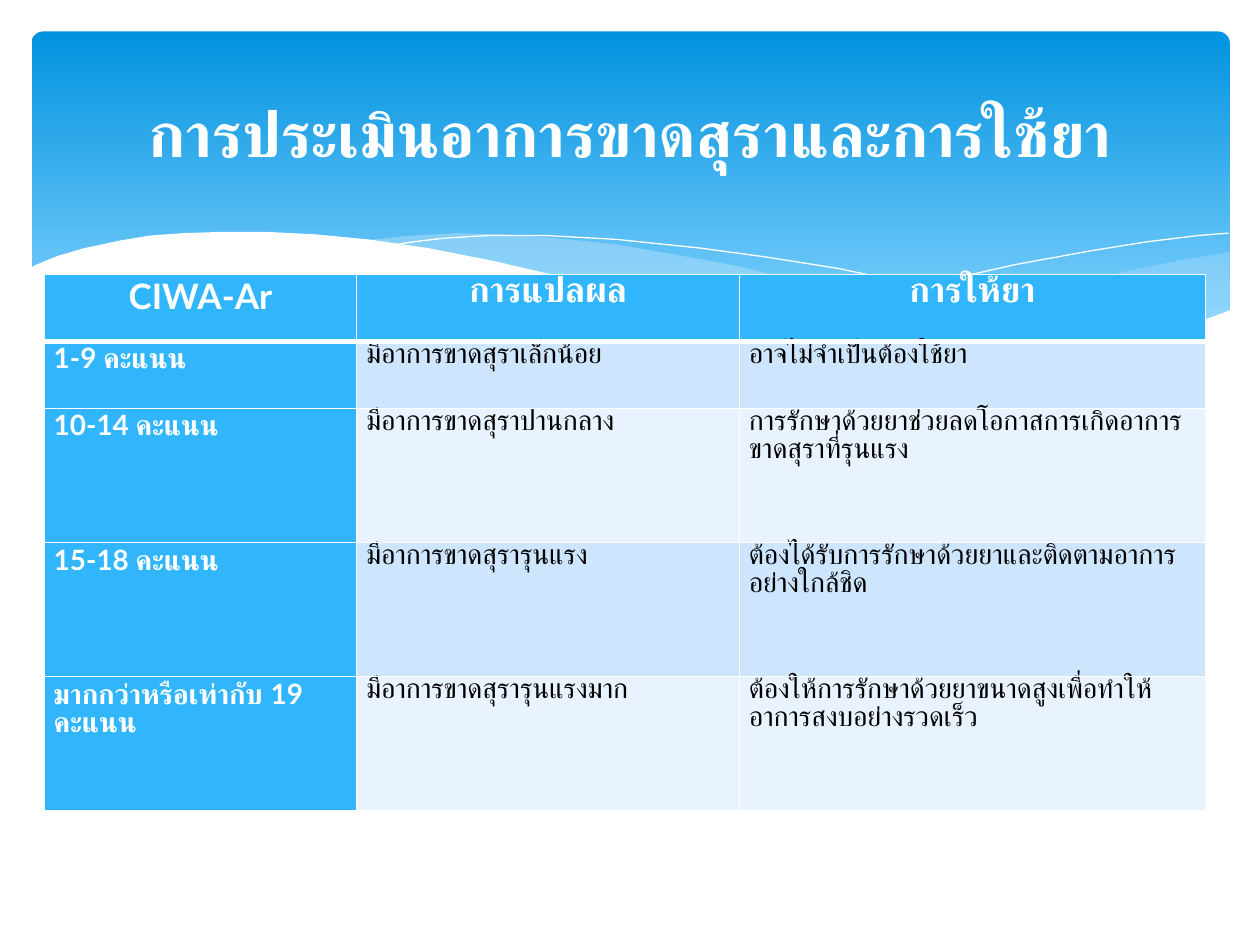
"""Build the slide on assessing alcohol withdrawal and choosing medication."""
import pptx
import pptx.dml.color
import pptx.enum.shapes
import pptx.enum.text
import pptx.oxml
import pptx.oxml.ns
import pptx.util

Pt = pptx.util.Pt
CENTER = pptx.enum.text.PP_ALIGN.CENTER
LEFT = pptx.enum.text.PP_ALIGN.LEFT
COLORS = {
    "white": "FFFFFF", "black": "000000", "sky top": "0293E0", "sky bottom": "83D3FE",
    "mist": "C6E7FC", "accent": "31B6FD", "band dark": "CEE5FE", "band light": "E8F3FF",
}


def color(name):
    return pptx.dml.color.RGBColor.from_string(COLORS[name])


def write(frame, text, alignment, size, bold, color_name):
    paragraph = frame.paragraphs[0]
    paragraph.alignment = alignment
    run = paragraph.add_run()
    run.text = text
    for name, value in {"name": "Lato", "size": Pt(size), "bold": bold}.items():
        setattr(run.font, name, value)
    run.font.color.rgb = color(color_name)


presentation = pptx.Presentation()
presentation.slide_width, presentation.slide_height = Pt(720), Pt(540)
slide = presentation.slides.add_slide(presentation.slide_layouts[6])

sky = slide.shapes.add_shape(
    pptx.enum.shapes.MSO_SHAPE.ROUNDED_RECTANGLE, Pt(18), Pt(18), Pt(684.7), Pt(194.4))
sky.adjustments[0] = 0.034
sky.shadow.inherit = False
sky.line.fill.background()
sky.fill.gradient()
sky.fill.gradient_angle = 270
for stop, position, name in zip(sky.fill.gradient_stops, (0, 0.9), ("sky top", "sky bottom")):
    stop.position = position
    stop.color.rgb = color(name)

right_wave = [
    (702.7, 144), (673.2, 149), (641.5, 155.5), (619.9, 160.6), (579.6, 170.6), (542.2, 178.6),
    (508.3, 185), (475.9, 190.8), (507.6, 195.1), (536.4, 198), (578.2, 200.2), (614.9, 198.7),
    (645.8, 194.4), (673.2, 188.6), (702.7, 177.8)]
middle_wave = [
    (643, 196.6), (602.6, 190.8), (558, 182.9), (508.3, 172.8), (452.9, 159.8), (420.5, 151.9),
    (389.5, 146.2), (352.1, 139.7), (318.2, 136.1), (287.3, 133.9), (259.9, 133.2),
    (236.2, 134.6), (205.9, 137.5), (246.2, 143.3), (290.9, 151.9), (323.3, 159.8),
    (381.6, 172.8), (432.7, 183.6), (478.8, 191.5), (519.8, 197.3), (556.6, 199.4),
    (589, 200.2), (617, 199.4)]
left_thread = [
    (222.5, 140.4), (236.2, 138.2), (254.2, 136.1), (278.6, 134.6), (311.8, 134.6),
    (352.1, 136.8), (400.3, 141.8), (437.8, 146.9), (478.8, 153.4), (523.4, 162.7),
    (572.4, 173.5), (625.7, 187.9), (653, 195.8)]
right_thread = [
    (441.4, 185), (470.2, 177.1), (500.4, 169.2), (538.6, 160.6), (580.3, 151.2),
    (623.5, 143.3), (655.2, 138.2), (684.7, 134.6), (702, 133.2)]
front_wave = [
    (703.4, 177.1), (684, 184.3), (662.4, 190.8), (638.6, 195.1), (612, 198), (582.5, 199.4),
    (547.9, 198), (509.8, 194.4), (466.6, 188.6), (416.9, 180), (362.2, 167.8), (321.8, 158.4),
    (281.5, 149), (244.8, 141.8), (210.2, 136.8), (180, 133.9), (151.9, 132.5), (127.4, 132.5),
    (105.1, 133.2), (85.7, 134.6), (68.4, 137.5), (48.2, 141.8), (33.1, 146.2), (20.9, 151.2),
    (16.6, 153.4), (16.6, 236.9), (703.4, 236.9)]

for points, fill_name, opacity in (
        (right_wave, "mist", 29), (middle_wave, "mist", 40), (left_thread, None, 100),
        (right_thread, None, 100), (front_wave, "white", 100)):
    tenths = [(x * 10, y * 10) for x, y in points]
    builder = slide.shapes.build_freeform(*tenths[0], scale=Pt(0.1))
    builder.add_line_segments(tenths[1:], close=fill_name is not None)
    shape = builder.convert_to_shape()
    shape.shadow.inherit = False
    if fill_name is None:
        shape.fill.background()
        shape.line.color.rgb = color("white")
        shape.line.width = Pt(0)
        continue
    shape.line.fill.background()
    shape.fill.solid()
    shape.fill.fore_color.rgb = color(fill_name)
    if opacity < 100:
        tint = shape.fill._xPr.find(".//" + pptx.oxml.ns.qn("a:srgbClr"))
        tint.append(pptx.oxml.parse_xml(
            f'<a:alpha {pptx.oxml.ns.nsdecls("a")} val="{opacity * 1000}"/>'))

rows = [
    ("CIWA-Ar", "การแปลผล", "การให้ยา"),
    ("1-9 คะแนน", "มีอาการขาดสุราเล็กน้อย", "อาจไม่จำเป็นต้องใช้ยา"),
    ("10-14 คะแนน", "มีอาการขาดสุราปานกลาง",
     "การรักษาด้วยยาช่วยลดโอกาสการเกิดอาการขาดสุราที่รุนแรง"),
    ("15-18 คะแนน", "มีอาการขาดสุรารุนแรง",
     "ต้องได้รับการรักษาด้วยยาและติดตามอาการอย่างใกล้ชิด"),
    ("มากกว่าหรือเท่ากับ 19 คะแนน", "มีอาการขาดสุรารุนแรงมาก",
     "ต้องให้การรักษาด้วยยาขนาดสูงเพื่อทำให้อาการสงบอย่างรวดเร็ว"),
]
widths = (178.5, 218.7, 266.4)
heights = (38.3, 38.3, 76.6, 76.6, 76.6)
table = slide.shapes.add_table(
    len(rows), len(widths), Pt(25.3), Pt(156.8), Pt(sum(widths)), Pt(sum(heights))).table
for column, width in zip(table.columns, widths):
    column.width = Pt(width)
cell_format = {"margin_left": Pt(5.4), "margin_right": Pt(5.4), "margin_top": 0, "margin_bottom": 0}
for row_index, (texts, height) in enumerate(zip(rows, heights)):
    table.rows[row_index].height = Pt(height)
    header = row_index == 0
    for column_index, text in enumerate(texts):
        cell = table.cell(row_index, column_index)
        for name, value in cell_format.items():
            setattr(cell, name, value)
        emphasized = header or column_index == 0
        write(cell.text_frame, text, CENTER if header else LEFT, 20 if header else 16,
              emphasized, "white" if emphasized else "black")
        for side in "LRTB":
            thick = (header and side == "B") or (row_index == 1 and side == "T")
            cell._tc.get_or_add_tcPr().append(pptx.oxml.parse_xml(
                f'<a:ln{side} {pptx.oxml.ns.nsdecls("a")} w="{Pt(3 if thick else 1)}"><a:solidFill>'
                f'<a:srgbClr val="{COLORS["white"]}"/></a:solidFill></a:ln{side}>'))
        band = "band dark" if row_index % 2 else "band light"
        cell.fill.solid()
        cell.fill.fore_color.rgb = color("accent" if emphasized else band)

title = slide.shapes.add_textbox(Pt(36), Pt(26.6), Pt(648), Pt(98.6))
title.text_frame.word_wrap = True
title.text_frame.vertical_anchor = pptx.enum.text.MSO_ANCHOR.MIDDLE
write(title.text_frame, "การประเมินอาการขาดสุราและการใช้ยา", CENTER, 36, True, "white")

presentation.save("out.pptx")
